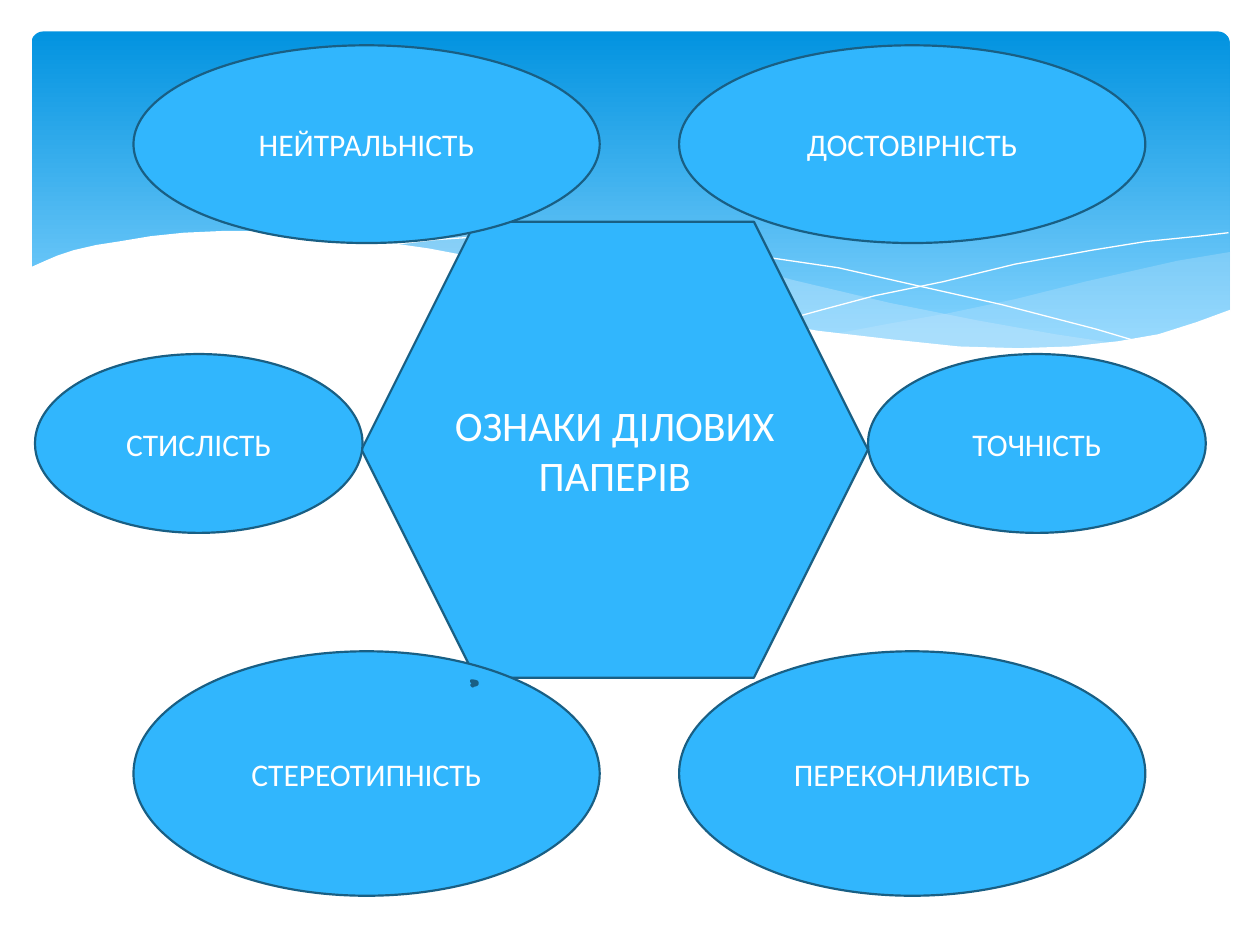
import pptx
import pptx.util
import pptx.dml.color
import pptx.enum.shapes
import pptx.enum.text

Pt = pptx.util.Pt
Rgb = pptx.dml.color.RGBColor.from_string
Kind = pptx.enum.shapes.MSO_SHAPE

theme = {
    "font": "Calibri",
    "main": 24,
    "label": 18,
    "text": "FFFFFF",
    "fill": "31B6FD",
    "edge": "195F84",
    "sky": ["0293E0", "83D3FE"],
    "mist": "C6E7FC",
    "page": "FFFFFF",
}

deck = pptx.Presentation()
deck.slide_width, deck.slide_height = Pt(720), Pt(540)
slide = deck.slides.add_slide(deck.slide_layouts[6])
shapes = slide.shapes


def curve(points, color, alpha=100, closed=True):
    pen = shapes.build_freeform(*points[0], scale=Pt(1))
    pen.add_line_segments(points[1:], close=closed)
    wave = pen.convert_to_shape()
    wave.shadow.inherit = False
    if closed:
        wave.fill.solid()
        wave.fill.fore_color.rgb = Rgb(color)
        wave.line.fill.background()
        tint = wave.fill._xPr.find(".//" + pptx.oxml.ns.qn("a:srgbClr"))
        if alpha < 100:
            node = pptx.oxml.parse_xml(
                f'<a:alpha {pptx.oxml.ns.nsdecls("a")} val="{alpha * 1000}"/>')
            tint.append(node)
    else:
        wave.fill.background()
        wave.line.color.rgb = Rgb(color)
        wave.line.width = Pt(0)


def node(kind, box, text="", size=theme["label"]):
    shape = shapes.add_shape(kind, *map(Pt, box))
    shape.shadow.inherit = False
    shape.fill.solid()
    shape.fill.fore_color.rgb = Rgb(theme["fill"])
    shape.line.color.rgb = Rgb(theme["edge"])
    shape.line.width = Pt(1.25)
    if text:
        frame = shape.text_frame
        frame.text = text
        frame.word_wrap = True
        frame.vertical_anchor = pptx.enum.text.MSO_ANCHOR.MIDDLE
        para = frame.paragraphs[0]
        para.alignment = pptx.enum.text.PP_ALIGN.CENTER
        font = para.runs[0].font
        font.name, font.size = theme["font"], Pt(size)
        font.color.rgb = Rgb(theme["text"])


sky = shapes.add_shape(Kind.ROUNDED_RECTANGLE, Pt(18), Pt(18), Pt(684.7), Pt(194.4))
sky.adjustments[0] = 0.034
sky.shadow.inherit = False
sky.line.fill.background()
sky.fill.gradient()
sky.fill.gradient_angle = 270
for stop, color, place in zip(sky.fill.gradient_stops, theme["sky"], (0, 0.9)):
    stop.color.rgb = Rgb(color)
    stop.position = place

curve([(702.7, 144), (673, 149), (641.5, 155.5), (620, 160.6), (579.6, 170.6),
       (542, 178.6), (508, 185), (476, 190.8), (507.6, 195), (536.4, 198),
       (570, 199.5), (601, 199.5), (628, 197.3), (651.6, 193.7), (673, 188.6),
       (693.4, 181.4), (702.7, 177.8)], theme["mist"], 29)
curve([(643, 196.6), (602.6, 190.8), (558, 182.9), (508.3, 172.8), (452.9, 159.8),
       (430.6, 154.1), (399.6, 147.6), (370.1, 142.6), (334.8, 137.5), (302.4, 134.6),
       (273.6, 133.2), (247.7, 133.9), (225.4, 135.4), (205.9, 137.5), (232.6, 141.1),
       (260.6, 146.2), (290.9, 151.9), (323.3, 159.8), (381.6, 172.8), (432.7, 183.6),
       (468, 190.1), (500.4, 194.4), (529.9, 198), (556.6, 199.4), (581, 200.2),
       (603.4, 200.2), (624.2, 198.7)], theme["mist"], 40)
curve([(222.5, 140.4), (247.7, 136.8), (278.6, 134.6), (311.8, 135.4), (352, 136.8),
       (400, 141.8), (437.8, 146.9), (478.8, 153.4), (523.4, 162.7), (572.4, 173.5),
       (625.7, 187.9), (653, 195.8)], theme["page"], closed=False)
curve([(441.4, 185), (470.2, 177.1), (500.4, 169.2), (538.6, 160.6), (580.3, 151.2),
       (623.5, 143.3), (655.2, 138.2), (684.7, 134.6), (702, 133.2)],
      theme["page"], closed=False)
curve([(703.4, 177.1), (684, 184.3), (662.4, 190.8), (639, 195.1), (612, 198),
       (582.5, 199.4), (547.9, 198), (509.8, 194.4), (466.6, 188.6), (417, 180),
       (362.2, 167.8), (321.8, 158.4), (281.5, 149), (244.8, 141.8), (210.2, 136.8),
       (180, 133.9), (151.9, 132.5), (127.4, 132.5), (105.1, 133.2), (85.7, 134.6),
       (68.4, 137.5), (54.7, 140.4), (42.5, 143.3), (33.1, 146.2), (25.9, 149),
       (16.6, 153.4), (16.6, 236.9), (703.4, 236.9)], theme["page"])

node(Kind.HEXAGON, (206.6, 126.7, 289.4, 260.6), "ОЗНАКИ ДІЛОВИХ ПАПЕРІВ", theme["main"])

rows = [
    (25.9, 113, ["НЕЙТРАЛЬНІСТЬ", "ДОСТОВІРНІСТЬ"], [(76.3, 266.4), (388.1, 266.4)]),
    (372.2, 139.7, ["СТЕРЕОТИПНІСТЬ", "ПЕРЕКОНЛИВІСТЬ"], [(76.3, 266.4), (388.1, 266.4)]),
    (202.3, 102.2, ["СТИСЛІСТЬ", "ТОЧНІСТЬ"], [(20, 187.2), (496, 193)]),
]
for top, high, names, spans in rows:
    for name, (left, wide) in zip(names, spans):
        node(Kind.OVAL, (left, top, wide, high), name)

node(Kind.CURVED_LEFT_ARROW, (269.3, 388.8, 3.6, 3.6))

deck.save("out.pptx")
